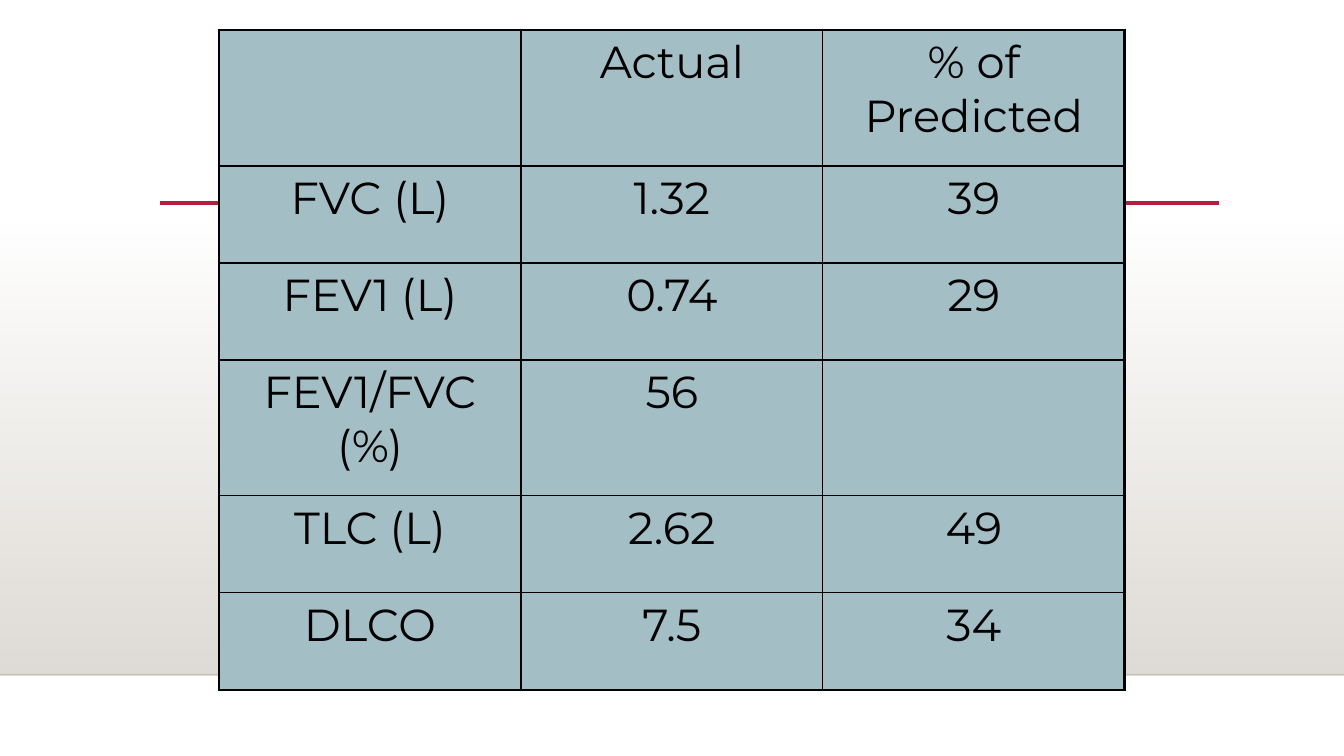
from lxml.etree import SubElement
from pptx import Presentation
from pptx.dml.color import RGBColor
from pptx.enum.shapes import MSO_CONNECTOR, MSO_SHAPE
from pptx.enum.text import PP_ALIGN
from pptx.oxml.ns import qn
from pptx.util import Emu, Pt

PX = 12192000 / 1344
BLACK = RGBColor(0x00, 0x00, 0x00)
NEAR_BLACK = RGBColor(0x00, 0x00, 0x01)
SAND = RGBColor(0xDF, 0xDB, 0xD5)
CRIMSON = RGBColor(0xB7, 0x1E, 0x42)
BLUE_GREY = RGBColor(0xA4, 0xBE, 0xC6)


def px(length):
    return Emu(round(length * PX))


def add_rule(left, right, y, color, weight):
    rule = slide.shapes.add_connector(
        MSO_CONNECTOR.STRAIGHT, px(left), px(y), px(right), px(y))
    rule.line.color.rgb = color
    rule.line.width = Pt(weight)
    SubElement(rule.line._get_or_add_ln().getparent(), qn("a:effectLst"))
    return rule


presentation = Presentation()
presentation.slide_width = px(1344)
presentation.slide_height = px(756)
slide = presentation.slides.add_slide(presentation.slide_layouts[6])

# Background fade, from transparent to sand
fade = slide.shapes.add_shape(MSO_SHAPE.RECTANGLE, 0, px(223), px(1344), px(452))
fade.shadow.inherit = False
fade.line.fill.background()
fade.fill.gradient()
fade.fill.gradient_angle = 270
for stop in fade.fill.gradient_stops:
    stop.color.rgb = SAND
first_color = next(fade._element.spPr.iter(qn("a:srgbClr")))
SubElement(first_color, qn("a:alpha"), val="0")

# Floor line and accent line
floor = add_rule(0, 1344, 675, NEAR_BLACK, 1)
floor_color = next(floor.line._get_or_add_ln().iter(qn("a:srgbClr")))
SubElement(floor_color, qn("a:alpha"), val="20000")
add_rule(160, 1219, 203, CRIMSON, 2.5)

# Lung function table
RESULTS = [
    ("", "Actual", "% of Predicted"),
    ("FVC (L)", "1.32", "39"),
    ("FEV1 (L)", "0.74", "29"),
    ("FEV1/FVC (%)", "56", ""),
    ("TLC (L)", "2.62", "49"),
    ("DLCO", "7.5", "34"),
]
ROW_HEIGHTS = [136, 97, 97, 136, 97, 97]
COLUMN_WIDTH = 302
last_row, last_column = len(RESULTS) - 1, len(RESULTS[0]) - 1

table = slide.shapes.add_table(
    len(RESULTS), len(RESULTS[0]), px(219), px(30),
    px(COLUMN_WIDTH * len(RESULTS[0])), px(sum(ROW_HEIGHTS))).table
table.first_row = False
table.horz_banding = False
for column in table.columns:
    column.width = px(COLUMN_WIDTH)

for r, (row, height) in enumerate(zip(RESULTS, ROW_HEIGHTS)):
    table.rows[r].height = px(height)
    for c, text in enumerate(row):
        cell = table.cell(r, c)

        # Thick frame outside, thin lines inside
        properties = cell._tc.get_or_add_tcPr()
        outer_edges = {"lnL": c == 0, "lnR": c == last_column,
                       "lnT": r == 0, "lnB": r == last_row}
        for edge, is_outer in outer_edges.items():
            border = SubElement(properties, qn(f"a:{edge}"),
                                w=str(Pt(2.25 if is_outer else 1)))
            border_fill = SubElement(border, qn("a:solidFill"))
            SubElement(border_fill, qn("a:srgbClr"), val=str(BLACK))
        cell.fill.solid()
        cell.fill.fore_color.rgb = BLUE_GREY

        if text:
            cell.text_frame.text = text
            paragraph = cell.text_frame.paragraphs[0]
            paragraph.alignment = PP_ALIGN.CENTER
            font = paragraph.runs[0].font
            font.name = "Montserrat"
            font.size = Pt(32)
            font.color.rgb = BLACK

presentation.save("out.pptx")
